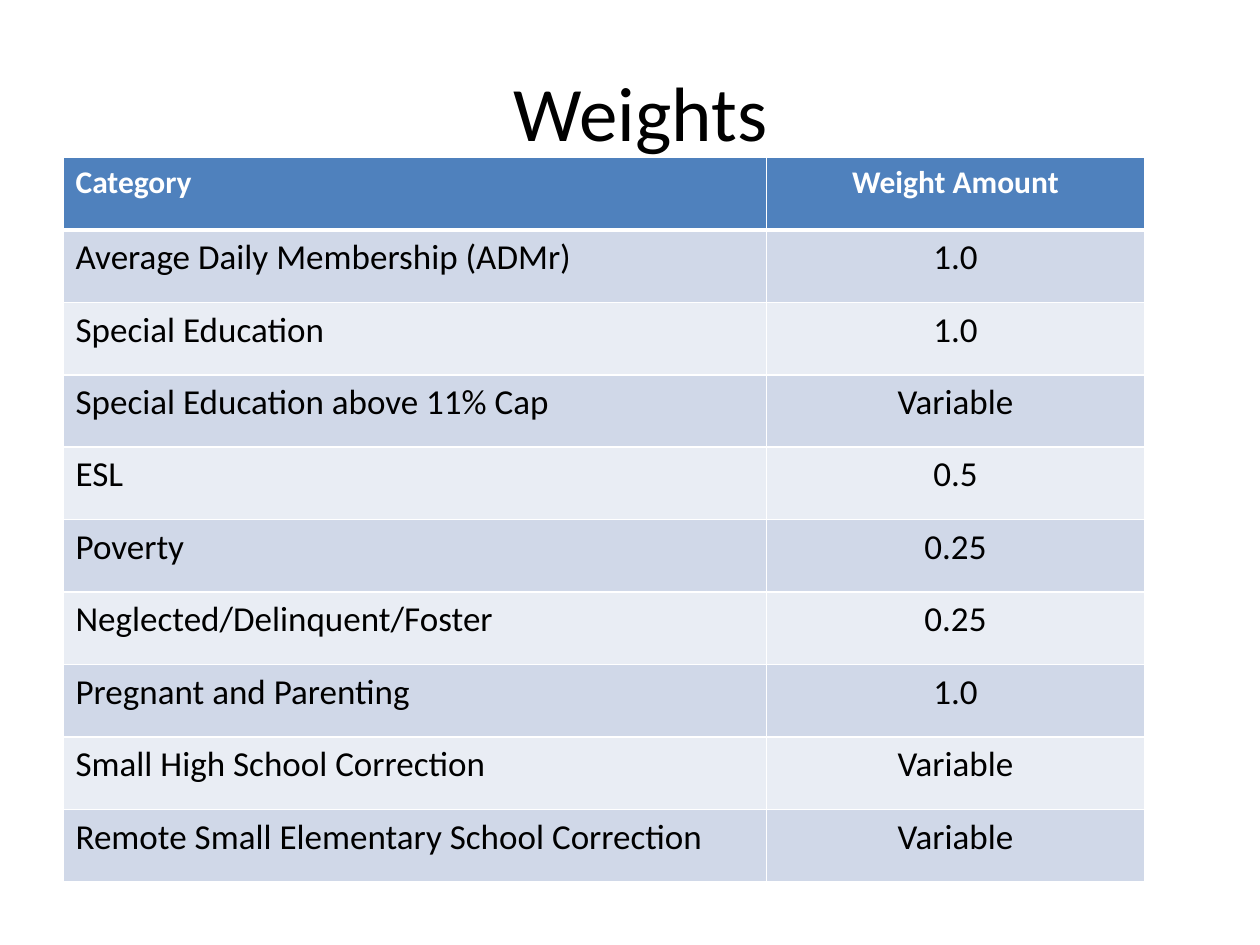
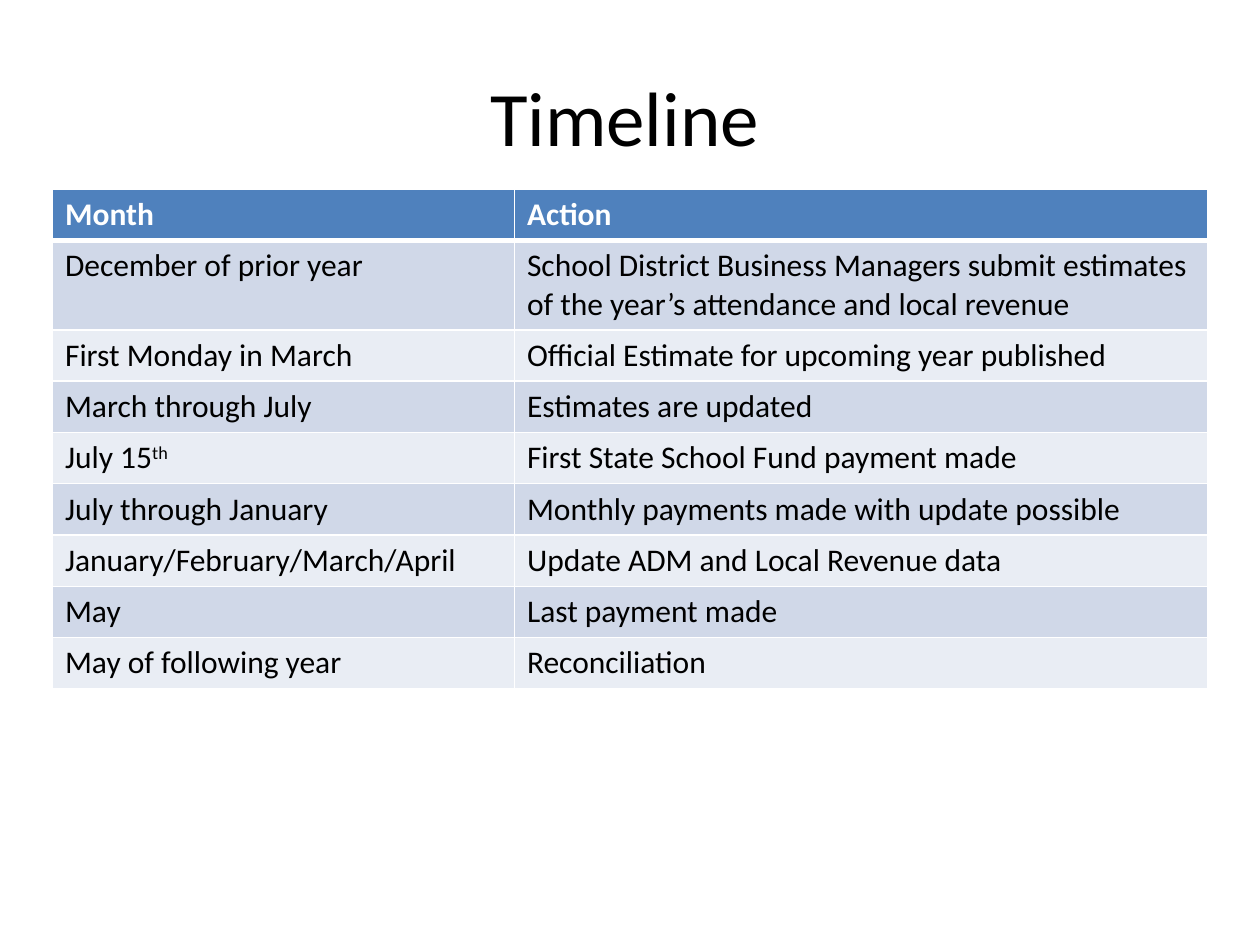
from lxml import etree
from pptx import Presentation
from pptx.dml.color import RGBColor
from pptx.enum.text import MSO_ANCHOR, PP_ALIGN
from pptx.oxml.ns import qn
from pptx.util import Inches, Pt

LEFT, CENTER = PP_ALIGN.LEFT, PP_ALIGN.CENTER
MIDDLE = MSO_ANCHOR.MIDDLE

BLACK = RGBColor(0x00, 0x00, 0x00)
WHITE = RGBColor(0xFF, 0xFF, 0xFF)
HEADER_BLUE = RGBColor(0x4F, 0x81, 0xBD)
BAND_DARK = RGBColor(0xD0, 0xD8, 0xE8)
BAND_LIGHT = RGBColor(0xE9, 0xED, 0xF4)

FONT = "Calibri"
TITLE_SIZE = 44
HEADER_SIZE = 18
THIN, THICK = 1, 3
GRID_COLUMNS, GRID_ROWS = 120, 90
TITLE_ONLY = 5

WEIGHTS = [
    ("Category", "Weight Amount"),
    ("Average Daily Membership (ADMr)", "1.0"),
    ("Special Education", "1.0"),
    ("Special Education above 11% Cap", "Variable"),
    ("ESL", "0.5"),
    ("Poverty", "0.25"),
    ("Neglected/Delinquent/Foster", "0.25"),
    ("Pregnant and Parenting", "1.0"),
    ("Small High School Correction", "Variable"),
    ("Remote Small Elementary School Correction", "Variable"),
]

TIMELINE = [
    ("Month", "Action"),
    ("December of prior year",
     "School District Business Managers submit estimates "
     "of the year’s attendance and local revenue"),
    ("First Monday in March", "Official Estimate for upcoming year published"),
    ("March through July", "Estimates are updated"),
    (("July 15", "th"), "First State School Fund payment made"),
    ("July through January", "Monthly payments made with update possible"),
    ("January/February/March/April", "Update ADM and Local Revenue data"),
    ("May", "Last payment made"),
    ("May of following year", "Reconciliation"),
]


class SlideBuilder:
    def __init__(self):
        self.deck = Presentation()
        self.deck.slide_width = Inches(10)
        self.deck.slide_height = Inches(7.5)
        self.column = self.deck.slide_width // GRID_COLUMNS
        self.row = self.deck.slide_height // GRID_ROWS
        self.page = None

    def place(self, left, top, width, height):
        return (left * self.column, top * self.row,
                width * self.column, height * self.row)

    def add_page(self):
        self.page = self.deck.slides.add_slide(self.deck.slide_layouts[TITLE_ONLY])

    def add_span(self, para, text, size, color, bold=False, raised=False):
        span = para.add_run()
        span.text = text
        span.font.name = FONT
        span.font.size = Pt(size)
        span.font.bold = bold
        span.font.color.rgb = color
        if raised:
            span.font._element.set("baseline", "30000")

    def add_title(self, text, *area):
        box = self.page.shapes.title
        box.left, box.top, box.width, box.height = self.place(*area)
        box.text_frame.vertical_anchor = MIDDLE
        para = box.text_frame.paragraphs[0]
        para.alignment = CENTER
        self.add_span(para, text, TITLE_SIZE, BLACK)

    def add_borders(self, cell, top, bottom):
        properties = cell._tc.get_or_add_tcPr()
        for side, width in (("L", THIN), ("R", THIN), ("T", top), ("B", bottom)):
            line = etree.SubElement(properties, qn(f"a:ln{side}"), w=str(Pt(width)))
            fill = etree.SubElement(line, qn("a:solidFill"))
            etree.SubElement(fill, qn("a:srgbClr"), val=str(WHITE))

    def add_table(self, records, left, top, widths, height, size, alignments):
        area = self.place(left, top, sum(widths), height)
        table = self.page.shapes.add_table(len(records), len(widths), *area).table
        for column, width in zip(table.columns, widths):
            column.width = width * self.column
        for index, record in enumerate(records):
            for cell, content, alignment in zip(
                    table.rows[index].cells, record, alignments):
                self.fill_cell(cell, index, content, size, alignment)

    def fill_cell(self, cell, index, content, size, alignment):
        header = index == 0
        self.add_borders(cell, THICK if index == 1 else THIN,
                         THICK if header else THIN)
        cell.fill.solid()
        band = BAND_DARK if index % 2 else BAND_LIGHT
        cell.fill.fore_color.rgb = HEADER_BLUE if header else band
        para = cell.text_frame.paragraphs[0]
        para.alignment = alignment
        parts = (content,) if isinstance(content, str) else content
        for position, text in enumerate(parts):
            self.add_span(para, text, HEADER_SIZE if header else size,
                          WHITE if header else BLACK, header, position > 0)


def main():
    builder = SlideBuilder()

    builder.add_page()
    builder.add_title("Weights", 7, 3, 108, 15)
    builder.add_table(WEIGHTS, 6, 15, (67, 36), 69, 20, (LEFT, CENTER))

    builder.add_page()
    builder.add_title("Timeline", 10, 6, 99, 10)
    builder.add_table(TIMELINE, 5, 18, (44, 66), 44, 18, (LEFT, LEFT))

    builder.deck.save("out.pptx")


if __name__ == "__main__":
    main()
